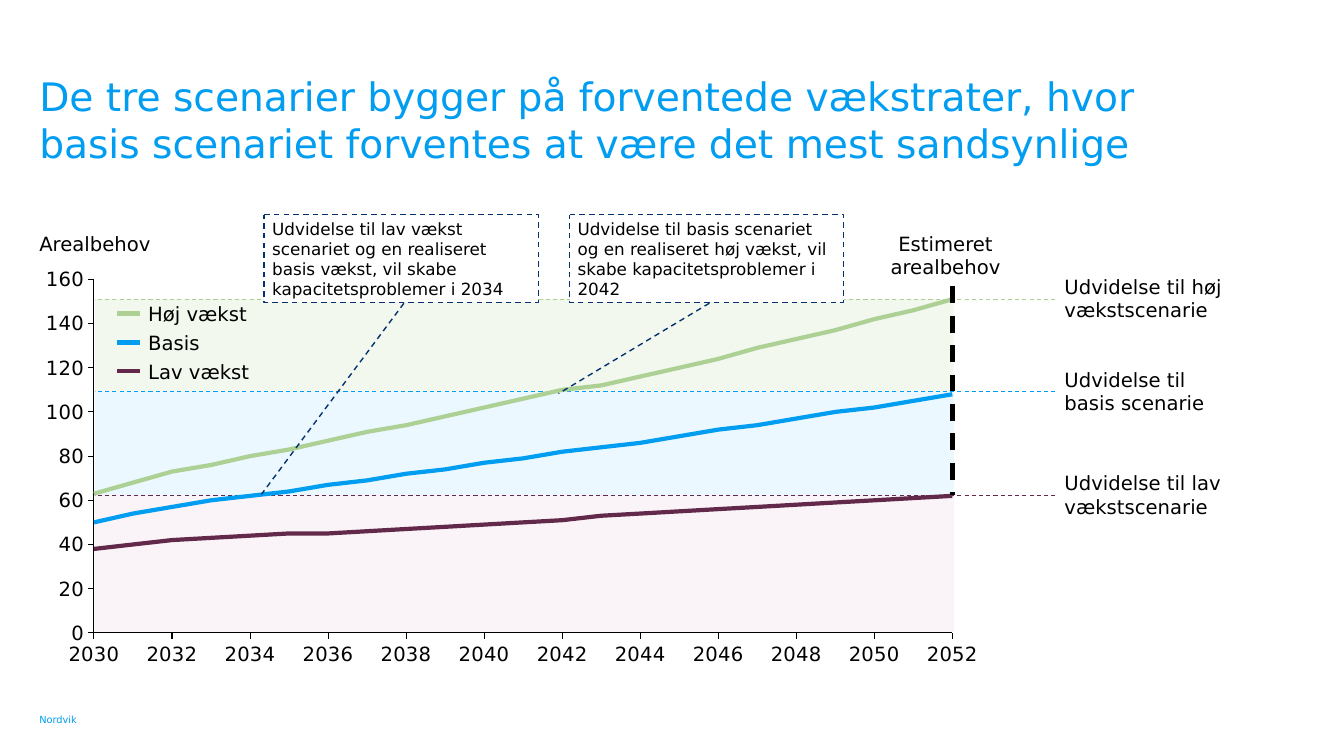
import pptx
import pptx.chart.data
import pptx.dml.color
import pptx.enum.chart
import pptx.enum.dml
import pptx.enum.shapes
import pptx.enum.text
import pptx.oxml
import pptx.oxml.ns
import pptx.util

FONT = "DejaVu Sans"
HEX = {"green": "ADD095", "blue": "009DF0", "plum": "62294B",
       "mint": "F2F8EE", "sky": "EBF8FF", "rose": "FAF4F8",
       "navy": "05326E", "black": "000000", "white": "FFFFFF"}
INK = {key: pptx.dml.color.RGBColor.from_string(code) for key, code in HEX.items()}
DASH = pptx.enum.dml.MSO_LINE.DASH
ANCHOR = pptx.enum.text.MSO_ANCHOR
SHAPE = pptx.enum.shapes.MSO_SHAPE
qn = pptx.oxml.ns.qn

# Grid: square cells, 133.3 columns by 75 rows
CELL = pptx.util.Inches(0.1)
deck = pptx.Presentation()
deck.slide_width, deck.slide_height = int(133.33 * CELL), 75 * CELL
slide = deck.slides.add_slide(deck.slide_layouts[6])
shapes = slide.shapes


def write(box, text, size, ink="black", anchor=ANCHOR.TOP, align=pptx.enum.text.PP_ALIGN.LEFT, pad=(0, 0)):
    frame = box.text_frame
    frame.word_wrap = True
    frame.vertical_anchor = anchor
    frame.margin_left = frame.margin_right = int(pad[0] * CELL)
    frame.margin_top = frame.margin_bottom = int(pad[1] * CELL)
    para = frame.paragraphs[0]
    para.alignment = align
    run = para.add_run()
    run.text = text
    run.font.name, run.font.size = FONT, pptx.util.Pt(size)
    run.font.color.rgb = INK[ink]


def rule(start, end, ink, width, dash=None):
    line = shapes.add_connector(pptx.enum.shapes.MSO_CONNECTOR.STRAIGHT,
                                *[int(n * CELL) for n in (*start, *end)])
    line.line.color.rgb = INK[ink]
    line.line.width = pptx.util.Pt(width)
    line.line.dash_style = dash
    line._element.spPr.append(pptx.oxml.parse_xml(
        '<a:effectLst %s/>' % pptx.oxml.ns.nsdecls("a")))


# Plot frame: base row, rows per unit of area, left and right columns
BASE, UNIT, LEFT, RIGHT = 62.7, 35 / 160, 9.4, 94.6
levels = [(151, "green", "mint", "Udvidelse til høj vækstscenarie"),
          (109, "blue", "sky", "Udvidelse til basis scenarie"),
          (62, "plum", "rose", "Udvidelse til lav vækstscenarie")]

# Bands under each level
for need, ink, tint, label in levels:
    top = BASE - need * UNIT
    band = shapes.add_shape(SHAPE.RECTANGLE, *[int(n * CELL) for n in (LEFT, top, RIGHT - LEFT, BASE - top)])
    band.shadow.inherit = False
    band.fill.solid()
    band.fill.fore_color.rgb = INK[tint]
    band.line.fill.background()

# Dashed levels with their labels
for need, ink, tint, label in levels:
    row = BASE - need * UNIT
    rule((104.7, row), (LEFT, row), ink, 0.75, DASH)
    box = shapes.add_textbox(*[int(n * CELL) for n in (105.6, row - 2.4, 16.8, 4.7)])
    write(box, label, 14)

# Growth chart
growth = [
    ("Høj vækst", "green", [63, 68, 73, 76, 80, 83, 87, 91, 94, 98, 102, 106, 110, 112, 116,
                            120, 124, 129, 133, 137, 142, 146, 151]),
    ("Basis", "blue", [50, 54, 57, 60, 62, 64, 67, 69, 72, 74, 77, 79, 82, 84, 86,
                       89, 92, 94, 97, 100, 102, 105, 108]),
    ("Lav vækst", "plum", [38, 40, 42, 43, 44, 45, 45, 46, 47, 48, 49, 50, 51, 53, 54,
                           55, 56, 57, 58, 59, 60, 61, 62])]
data = pptx.chart.data.XyChartData()
for name, ink, needs in growth:
    series = data.add_series(name)
    for year, need in enumerate(needs, 2030):
        series.add_data_point(year, need)
chart = shapes.add_chart(pptx.enum.chart.XL_CHART_TYPE.XY_SCATTER_LINES_NO_MARKERS,
                         *[int(n * CELL) for n in (2.7, 26.3, 96, 40.6)], data).chart
chart.has_legend = chart.has_title = False
chart.font.name, chart.font.size = FONT, pptx.util.Pt(14)
chart.font.color.rgb = INK["black"]
chart.plots[0].vary_by_categories = False
for series, (name, ink, needs) in zip(chart.plots[0].series, growth):
    series.smooth = False
    series.format.line.color.rgb = INK[ink]
    series.format.line.width = pptx.util.Pt(3)

# Chart axes
for axis, low, high, step, form in [
        (chart.category_axis, 2030, 2052, 2, '0;"-"0'),
        (chart.value_axis, 0, 160, 20, '#,##0;"-"#,##0')]:
    axis.minimum_scale, axis.maximum_scale, axis.major_unit = low, high, step
    axis.has_major_gridlines = False
    axis.major_tick_mark = pptx.enum.chart.XL_TICK_MARK.OUTSIDE
    axis.minor_tick_mark = pptx.enum.chart.XL_TICK_MARK.NONE
    axis.tick_labels.number_format = form
    axis.tick_labels.number_format_is_linked = False
    axis.format.line.color.rgb = INK["black"]
    axis.format.line.width = pptx.util.Pt(0.75)

# Fixed plot area and clear chart background
plot = chart.element.find(".//" + qn("c:plotArea"))
for old in plot.findall(qn("c:layout")):
    plot.remove(old)
plot.insert(0, pptx.oxml.parse_xml(
    '<c:layout %s><c:manualLayout><c:layoutTarget val="inner"/>'
    '<c:xMode val="edge"/><c:yMode val="edge"/><c:x val="0.069"/><c:y val="0.035"/>'
    '<c:w val="0.887"/><c:h val="0.864"/></c:manualLayout></c:layout>' % pptx.oxml.ns.nsdecls("c")))
chart.element.find(qn("c:txPr")).addprevious(pptx.oxml.parse_xml(
    '<c:spPr %s><a:noFill/><a:ln><a:noFill/></a:ln></c:spPr>' % pptx.oxml.ns.nsdecls("c", "a")))

# Legend
for i, (name, ink, needs) in enumerate(growth):
    row = 31.1 + 2.87 * i
    rule((11.6, row), (13.9, row), ink, 3)
    box = shapes.add_textbox(*[int(n * CELL) for n in (14.7, row - 1.1, 12, 2.3)])
    write(box, name, 14, anchor=ANCHOR.MIDDLE)

# End year marker
rule((94.5, 28.4), (94.5, 49.1), "black", 3, DASH)

# Title, headings and footer
center, left = pptx.enum.text.PP_ALIGN.CENTER, pptx.enum.text.PP_ALIGN.LEFT
for place, text, size, ink, anchor, align in [
        ((3.9, 7.2, 114.6, 10.2), "De tre scenarier bygger på forventede vækstrater, hvor "
         "basis scenariet forventes at være det mest sandsynlige", 28, "blue", ANCHOR.TOP, left),
        ((3.9, 23, 16.2, 2.4), "Arealbehov", 14, "black", ANCHOR.TOP, left),
        ((87.2, 23, 13.2, 4.7), "Estimeret arealbehov", 14, "black", ANCHOR.TOP, center),
        ((3.9, 69.6, 8.5, 2.4), "Nordvik", 7, "blue", ANCHOR.BOTTOM, left)]:
    box = shapes.add_textbox(*[int(n * CELL) for n in place])
    write(box, text, size, ink, anchor, align)

# Callouts
for col, tip, text in [
        (26.2, (3.19, -0.01), "Udvidelse til lav vækst scenariet og en realiseret "
         "basis vækst, vil skabe kapacitetsproblemer i 2034"),
        (56.5, (2.04, -0.04), "Udvidelse til basis scenariet og en realiseret "
         "høj vækst, vil skabe kapacitetsproblemer i 2042")]:
    note = shapes.add_shape(SHAPE.LINE_CALLOUT_1, *[int(n * CELL) for n in (col, 21.3, 27.2, 8.7)])
    for i, share in enumerate((1.01, 0.51, *tip)):
        note.adjustments[i] = share
    note.shadow.inherit = False
    note.fill.solid()
    note.fill.fore_color.rgb = INK["white"]
    note.line.color.rgb = INK["navy"]
    note.line.width = pptx.util.Pt(1)
    note.line.dash_style = DASH
    write(note, text, 12, pad=(0.8, 0.4))

deck.save("out.pptx")
